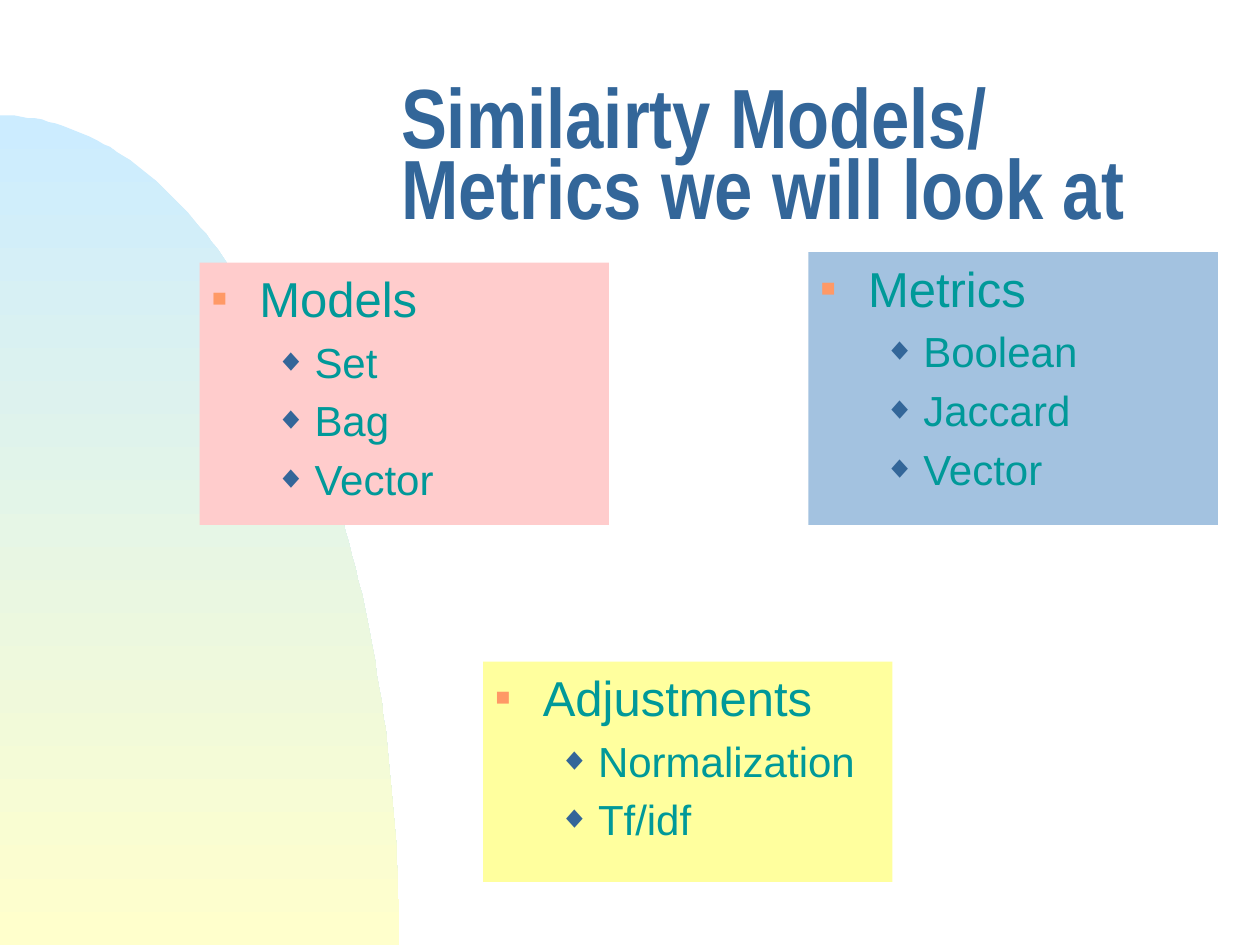
from math import cos, pi, sin

from lxml.etree import SubElement
from pptx import Presentation
from pptx.dml.color import RGBColor
from pptx.enum.shapes import MSO_SHAPE
from pptx.enum.text import MSO_ANCHOR, MSO_AUTO_SIZE, PP_ALIGN
from pptx.oxml.ns import qn
from pptx.util import Pt

PX = 9525
COLORS = {
    "sky": "CCECFF", "sand": "FFFFCC", "title": "336699", "text": "009999",
    "square": "FF9966", "diamond": "336699",
    "models": "FFCCCC", "adjust": "FFFF9E", "metrics": "A3C2E0",
}
LEVELS = [
    {"size": 28, "left": 36, "hang": 36, "mark": "■", "color": "square", "scale": 50},
    {"size": 24, "left": 78, "hang": 30, "mark": "◆", "color": "diamond", "scale": 75},
]


def rgb(name):
    """Return the named colour."""
    return RGBColor.from_string(COLORS[name])


def place(shape, box):
    """Set the position and size of a shape in px."""
    shape.left, shape.top, shape.width, shape.height = [n * PX for n in box]


def style(para, face, size, color, bold=False):
    """Format every run of a paragraph."""
    for run in para.runs:
        font = run.font
        font.name, font.size, font.bold = face, Pt(size), bold
        font.color.rgb = rgb(color)


def bullet(para, level):
    """Give a paragraph its indent, spacing and bullet."""
    props = para._p.get_or_add_pPr()
    props.set("marL", str(level["left"] * PX))
    props.set("indent", str(-level["hang"] * PX))
    space = SubElement(props, qn("a:spcBef"))
    SubElement(space, qn("a:spcPct"), val="20000")
    color = SubElement(props, qn("a:buClr"))
    SubElement(color, qn("a:srgbClr"), val=COLORS[level["color"]])
    SubElement(props, qn("a:buSzPct"), val=str(level["scale"] * 1000))
    SubElement(props, qn("a:buFont"), typeface="Arial")
    SubElement(props, qn("a:buChar"), char=level["mark"])


def add_hill(slide):
    """Draw the quarter ellipse behind everything else."""
    wide, high, base, steps = 304, 632, 720, 90
    turns = [pi / 2 * i / steps for i in range(steps + 1)]
    curve = [(wide * sin(t), base - high * cos(t)) for t in turns]
    build = slide.shapes.build_freeform(0, base, scale=PX)
    build.add_line_segments(curve, close=True)
    hill = build.convert_to_shape()
    hill.shadow.inherit = False
    hill.line.fill.background()
    hill.fill.gradient()
    hill.fill.gradient_angle = 270
    for stop, name in zip(hill.fill.gradient_stops, ("sky", "sand")):
        stop.color.rgb = rgb(name)
    slide.shapes._spTree.insert(2, hill._element)


def set_title(shape, text):
    """Fill and format the title."""
    place(shape, (296, 64, 640, 120))
    frame = shape.text_frame
    frame.text = text
    frame.auto_size = MSO_AUTO_SIZE.NONE
    frame.vertical_anchor = MSO_ANCHOR.MIDDLE
    para = frame.paragraphs[0]
    para.alignment = PP_ALIGN.LEFT
    para.line_spacing = 0.7
    style(para, "Arial Narrow", 48, "title", True)


def set_list(shape, box, fill, items):
    """Turn a shape into a coloured panel with a heading and its items."""
    place(shape, box)
    shape.fill.solid()
    shape.fill.fore_color.rgb = rgb(fill)
    frame = shape.text_frame
    frame.text = "\n".join(items)
    frame.word_wrap = True
    frame.auto_size = MSO_AUTO_SIZE.NONE
    frame.vertical_anchor = MSO_ANCHOR.TOP
    for i, para in enumerate(frame.paragraphs):
        para.level = min(i, 1)
        para.alignment = PP_ALIGN.LEFT
        level = LEVELS[para.level]
        bullet(para, level)
        style(para, "Arial", level["size"], "text")


def add_panel(slide):
    """Add a plain rectangle without line or shadow."""
    panel = slide.shapes.add_shape(MSO_SHAPE.RECTANGLE, 0, 0, PX, PX)
    panel.shadow.inherit = False
    panel.line.fill.background()
    return panel


def main():
    """Build and save the slide."""
    deck = Presentation()
    deck.slide_width, deck.slide_height = 960 * PX, 720 * PX
    slide = deck.slides.add_slide(deck.slide_layouts[3])
    title, left, right = list(slide.placeholders)[:3]
    add_hill(slide)
    set_title(title, "Similairty Models/ Metrics we will look at")
    set_list(left, (152, 200, 312, 200), "models",
             ["Models", "Set", "Bag", "Vector"])
    set_list(right, (368, 504, 312, 168), "adjust",
             ["Adjustments", "Normalization", "Tf/idf"])
    set_list(add_panel(slide), (616, 192, 312, 208), "metrics",
             ["Metrics", "Boolean", "Jaccard", "Vector"])
    deck.save("out.pptx")


if __name__ == "__main__":
    main()
